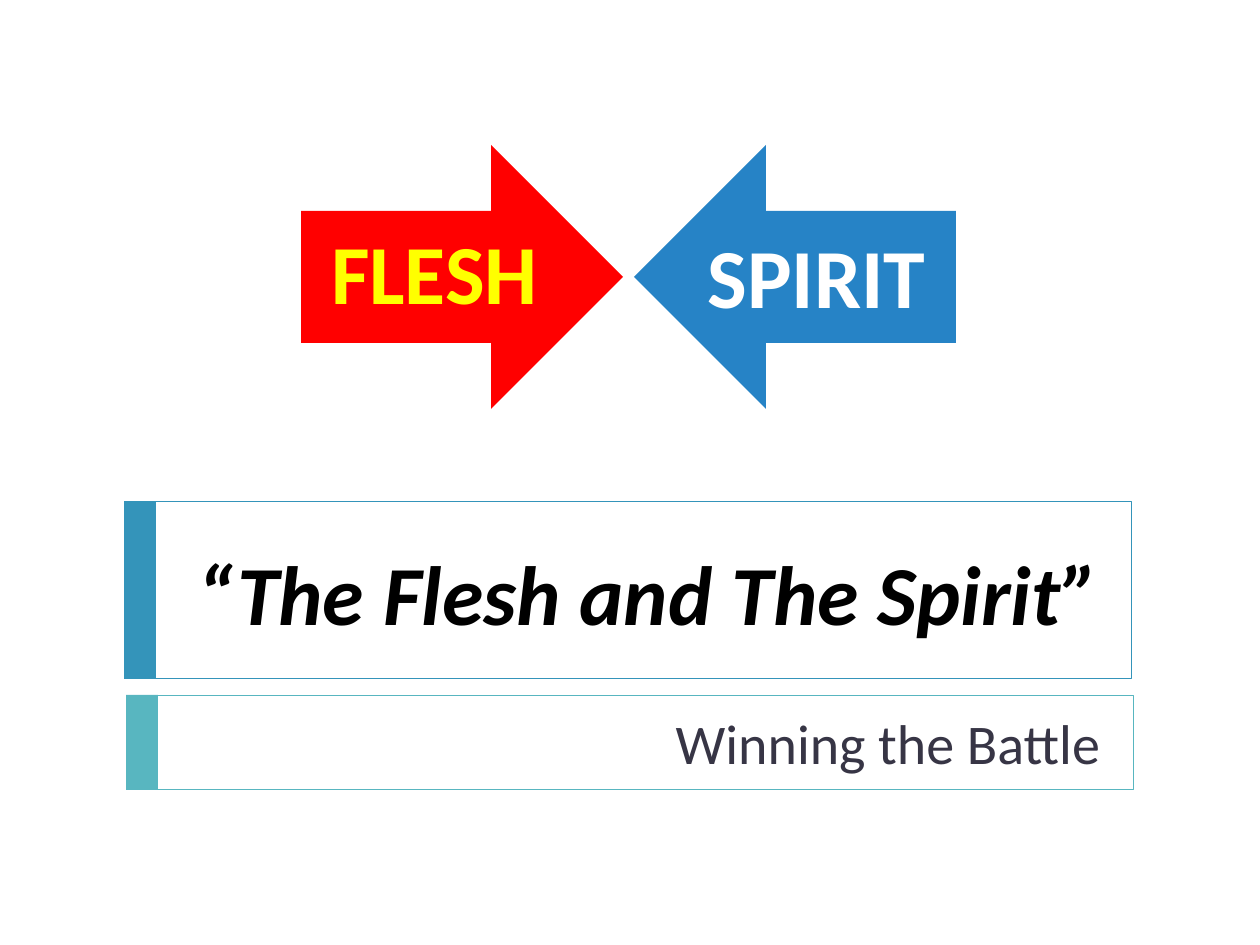
from pptx import Presentation
from pptx.dml.color import RGBColor
from pptx.enum.shapes import MSO_SHAPE as SHAPE
from pptx.enum.text import MSO_ANCHOR as ANCHOR, PP_ALIGN as ALIGN
from pptx.util import Pt

PX = 914400 // 126
BLUE = RGBColor(0x34, 0x94, 0xBA)
TEAL = RGBColor(0x58, 0xB6, 0xC0)
SKY = RGBColor(0x26, 0x83, 0xC6)
RED = RGBColor(0xFF, 0x00, 0x00)
YELLOW = RGBColor(0xFF, 0xFF, 0x00)
WHITE = RGBColor(0xFF, 0xFF, 0xFF)
BLACK = RGBColor(0x00, 0x00, 0x00)
SLATE = RGBColor(0x37, 0x35, 0x45)


def emu(box):
    return [v * PX for v in box]


def add_block(s, kind, box, fill=None, line=None):
    sp = s.shapes.add_shape(kind, *emu(box))
    sp.shadow.inherit = False
    if fill is None:
        sp.fill.background()
    else:
        sp.fill.solid()
        sp.fill.fore_color.rgb = fill
    if line is None:
        sp.line.fill.background()
    else:
        sp.line.color.rgb = line
        sp.line.width = Pt(0.5)


def set_text(sp, box, text, align, size, color, **fmt):
    sp.left, sp.top, sp.width, sp.height = emu(box)
    tf = sp.text_frame
    tf.word_wrap = True
    tf.vertical_anchor = ANCHOR.TOP
    p = tf.paragraphs[0]
    p.alignment = align
    r = p.add_run()
    r.text = text
    r.font.color.rgb = color
    for name, value in {"name": "Calibri", "size": Pt(size), **fmt}.items():
        setattr(r.font, name, value)


def add_arrow(s, box, kind, fill, label, label_box, color):
    x, y, w, h = box
    dx, dy, label_w, label_h = label_box
    add_block(s, kind, box, fill)
    sp = s.shapes.add_textbox(0, 0, 0, 0)
    set_text(sp, (x + dx, y + dy, label_w, label_h), label,
             ALIGN.CENTER, 48, color, bold=True)


def add_banner(s, box, color, sp, text_top, text_h, text, size, text_color, **fmt):
    x, y, w, h = box
    add_block(s, SHAPE.RECTANGLE, box, line=color)
    add_block(s, SHAPE.RECTANGLE, (x, y, 32, h), color)
    set_text(sp, (168, y + text_top, 945, text_h), text,
             ALIGN.RIGHT, size, text_color, **fmt)


def main():
    prs = Presentation()
    prs.slide_width, prs.slide_height = emu((1260, 945))
    s = prs.slides.add_slide(prs.slide_layouts[5])

    add_banner(s, (124, 502, 1008, 177), BLUE, s.shapes.title, 33, 136,
               "“The Flesh and The Spirit”", 48, BLACK, bold=True, italic=True)
    subtitle = s.shapes.add_textbox(0, 0, 0, 0)
    add_banner(s, (126, 695, 1008, 95), TEAL, subtitle, 7, 73,
               "Winning the Battle", 32, SLATE)

    add_arrow(s, (634, 145, 322, 264), SHAPE.LEFT_ARROW, SKY,
              "SPIRIT", (15, 73, 335, 115), WHITE)
    add_arrow(s, (301, 145, 322, 264), SHAPE.RIGHT_ARROW, RED,
              "FLESH", (-28, 69, 323, 115), YELLOW)
    prs.save("out.pptx")


if __name__ == "__main__":
    main()
